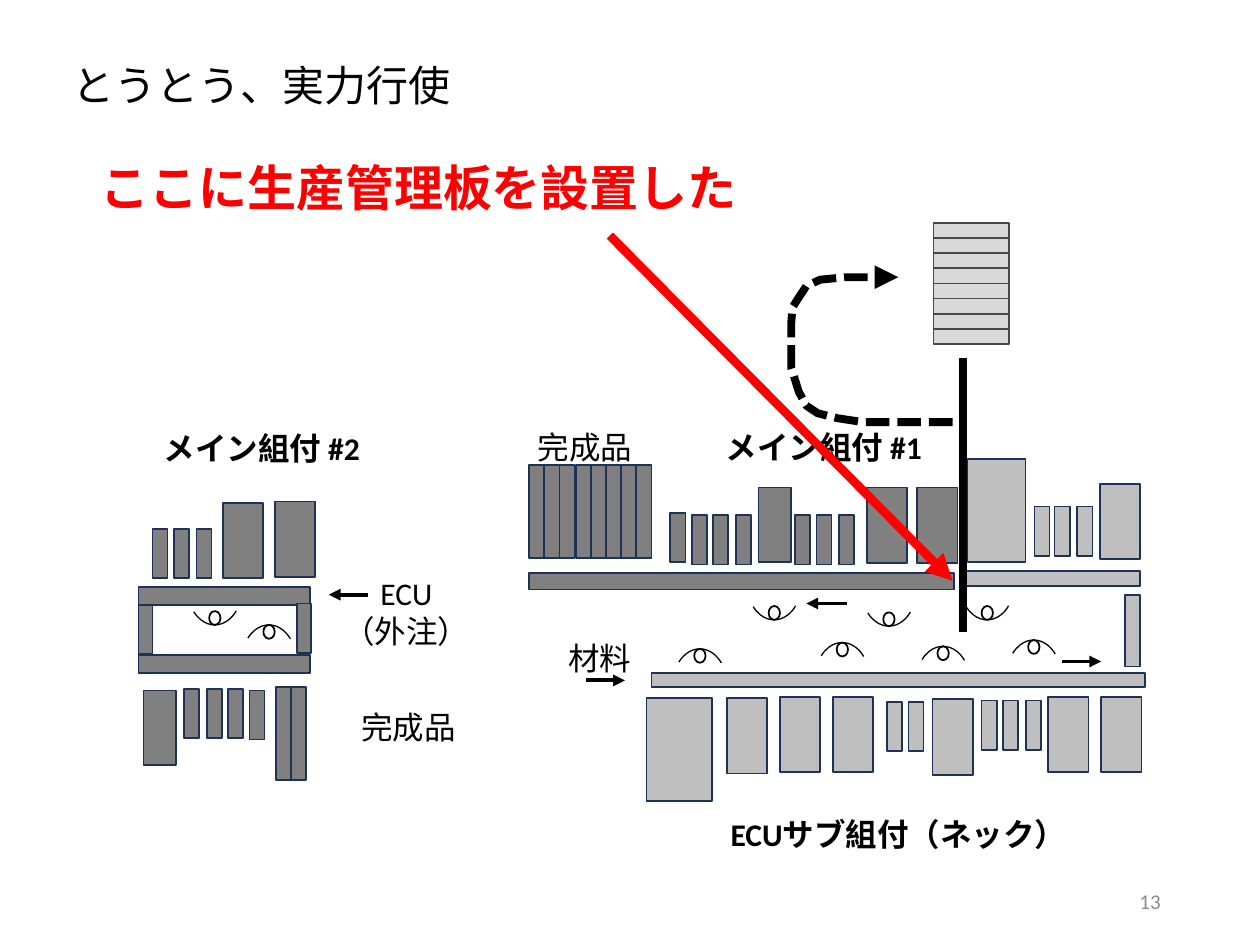
import dataclasses
import typing

import pptx
import pptx.dml.color
import pptx.enum.dml
import pptx.enum.shapes
import pptx.enum.text
import pptx.oxml
import pptx.oxml.ns
import pptx.util

PX = 9144  # 100 px to the inch
COLORS = {
    "ink": "000000", "alert": "FF0000", "number": "8C8C8C",
    "main": "808080", "sub": "BFBFBF", "machine_edge": "1E3256",
    "board": "D9D9D9", "board_edge": "484848",
}
SHAPE = pptx.enum.shapes.MSO_SHAPE
ALIGN = pptx.enum.text.PP_ALIGN
SMALL, LARGE, NARROW, SHELF, TALL = (12, 39), (32, 60), (26, 59), (12, 74), (50, 82)


def rgb(name):
    return pptx.dml.color.RGBColor.from_string(COLORS[name])


def set_line(shape, color, width):
    shape.line.color.rgb = rgb(color)
    shape.line.width = pptx.util.Pt(width)


def add_arrowhead(shape):
    tail = pptx.oxml.parse_xml(
        f'<a:tailEnd {pptx.oxml.ns.nsdecls("a")} type="triangle"/>')
    shape.line._get_or_add_ln().append(tail)


@dataclasses.dataclass
class Region:
    """Draws parts at px offsets from its top left corner."""
    slide: typing.Any
    left: int
    top: int

    def place(self, x, y):
        return (self.left + x) * PX, (self.top + y) * PX

    def preset(self, shapes, kind, x, y, size, fill, edge, width=1):
        shape = shapes.add_shape(kind, *self.place(x, y), size[0] * PX, size[1] * PX)
        shape.shadow.inherit = False
        if fill:
            shape.fill.solid()
            shape.fill.fore_color.rgb = rgb(fill)
        else:
            shape.fill.background()
        set_line(shape, edge, width)
        return shape

    def machines(self, fill, size, y, *xs, edge="machine_edge"):
        for x in xs:
            self.preset(self.slide.shapes, SHAPE.RECTANGLE, x, y, size, fill, edge)

    def worker(self, x, y, facing_down=False):
        """Shoulders as an arc with a head; facing_down mirrors both."""
        group = self.slide.shapes.add_group_shape().shapes
        arc = self.preset(group, SHAPE.ARC, x, y, (43, 57), None, "ink", 0.75)
        arc.adjustments[0], arc.adjustments[1] = 136.35, 188.71
        if facing_down:
            arc._element.spPr.xfrm.set("flipV", "1")
        head_y = y + 46 if facing_down else y
        self.preset(group, SHAPE.OVAL, x + 17, head_y, (9, 11), None, "ink")

    def line(self, start, end, color="ink", width=2.25, arrow=True):
        connector = self.slide.shapes.add_connector(
            pptx.enum.shapes.MSO_CONNECTOR.STRAIGHT, *self.place(*start), *self.place(*end))
        set_line(connector, color, width)
        if arrow:
            add_arrowhead(connector)
        connector._element.spPr.append(
            pptx.oxml.parse_xml(f'<a:effectLst {pptx.oxml.ns.nsdecls("a")}/>'))

    def label(self, text, x, y, width, height, size=18, color="ink", bold=False,
              align=ALIGN.LEFT, anchor=pptx.enum.text.MSO_ANCHOR.TOP):
        box = self.slide.shapes.add_textbox(*self.place(x, y), width * PX, height * PX)
        frame = box.text_frame
        frame.word_wrap = True
        frame.vertical_anchor = anchor
        frame.text = text
        for paragraph in frame.paragraphs:
            paragraph.alignment = align
            for run in paragraph.runs:
                run.font.name = "Calibri"
                run.font.size = pptx.util.Pt(size)
                run.font.bold = bold
                run.font.color.rgb = rgb(color)


def draw_sub_line(slide, left, top):
    """The ECU sub-assembly loop, the bottleneck."""
    region = Region(slide, left, top)
    for size, y, *xs in [
        ((46, 82), 0, 327), (SMALL, 38, 380, 396, 414), (LARGE, 20, 432),
        ((141, 12), 89, 323), ((12, 57), 108, 452), ((392, 11), 170, 76),
        ((52, 82), 190, 72), (LARGE, 190, 136), (LARGE, 189, 178, 220, 391, 433),
        (SMALL, 193, 263, 280), (LARGE, 191, 299), (SMALL, 192, 338, 355, 373),
    ]:
        region.machines("sub", size, y, *xs)
    for x, y in [(93, 151), (206, 146), (286, 149), (358, 144)]:
        region.worker(x, y)
    region.worker(321, 71, facing_down=True)
    region.line((402, 161), (433, 161))
    region.line((24, 176), (55, 176))
    region.label("材料", 0, 138, 79, 30)
    region.label("ECUサブ組付（ネック）", 129, 278, 370, 40, bold=True)


def draw_main_line_1(slide, left, top):
    region = Region(slide, left, top)
    shelves = [round(i * 12.2) for i in range(8)]
    for size, y, *xs in [
        (SHELF, 34, *shelves), (SMALL, 72, 112),
        (SMALL, 74, 129, 146, 164, 211, 228, 246), (NARROW, 52, 182),
        (LARGE, 52, 268, 308), ((337, 13), 120, 0),
    ]:
        region.machines("main", size, y, *xs)
    region.worker(173, 100, facing_down=True)
    region.worker(264, 105, facing_down=True)
    region.line((252, 144), (220, 144))
    region.label("完成品", -3, 0, 117, 40)
    region.label("メイン組付 #1", 146, 0, 282, 40, bold=True)


def draw_main_line_2(slide, left, top):
    region = Region(slide, left, top)
    for size, y, *xs in [
        (SMALL, 84, 11, 28, 46), (LARGE, 63, 67), (LARGE, 62, 108),
        ((136, 14), 130, 0), ((136, 14), 184, 0), ((11, 39), 144, 0),
        ((11, 39), 143, 126), (NARROW, 212, 4), (SMALL, 211, 36, 54, 71),
        (SMALL, 212, 88), (SHELF, 209, 109, 121),
    ]:
        region.machines("main", size, y, *xs)
    region.worker(39, 103, facing_down=True)
    region.worker(82, 160)
    region.line((182, 136), (151, 136))
    region.label("メイン組付 #2", 10, 0, 282, 40, bold=True)
    region.label("ECU\n（外注）", 151, 115, 123, 71, align=ALIGN.CENTER)
    region.label("完成品", 167, 221, 117, 40)


def draw_control_board(slide, left, top):
    """The board seen edge-on, its enlarged rows and the dashed route between."""
    region = Region(slide, left, top)
    region.line((136, 107), (136, 325), width=4.5, arrow=False)
    for row in range(8):
        region.machines("board", (60, 12), row * 12, 113, edge="board_edge")
    start, *bends = [
        (128, 158), (57, 158), (37, 155), (21, 151), (12, 145), (6, 134), (0, 115),
        (0, 79), (1, 67), (6, 59), (12, 50), (23, 45), (43, 43), (85, 43)]
    builder = slide.shapes.build_freeform(*region.place(*start), scale=1.0)
    builder.add_line_segments([region.place(*bend) for bend in bends], close=False)
    route = builder.convert_to_shape()
    route.shadow.inherit = False
    route.fill.background()
    set_line(route, "ink", 4.5)
    route.line.dash_style = pptx.enum.dml.MSO_LINE.SQUARE_DOT
    add_arrowhead(route)


def draw_callout(slide, left, top):
    region = Region(slide, left, top)
    region.line((414, 67), (686, 341), color="alert", width=5)
    region.label("ここに生産管理板を設置した", 0, 0, 594, 57, size=28, color="alert", bold=True)


def draw_title_and_number(slide, left, top):
    region = Region(slide, left, top)
    region.label("とうとう、実力行使", 0, 0, 530, 50, size=24)
    region.label("13", 658, 653, 225, 40, size=12, color="number",
                 align=ALIGN.RIGHT, anchor=pptx.enum.text.MSO_ANCHOR.MIDDLE)


def main():
    deck = pptx.Presentation()
    deck.slide_width, deck.slide_height = 1000 * PX, 750 * PX
    slide = deck.slides.add_slide(deck.slide_layouts[6])
    draw_title_and_number(slide, 48, 42)
    draw_sub_line(slide, 441, 364)
    draw_main_line_1(slide, 420, 335)
    draw_main_line_2(slide, 110, 336)
    draw_control_board(slide, 628, 177)
    draw_callout(slide, 70, 120)
    deck.save("out.pptx")


if __name__ == "__main__":
    main()
